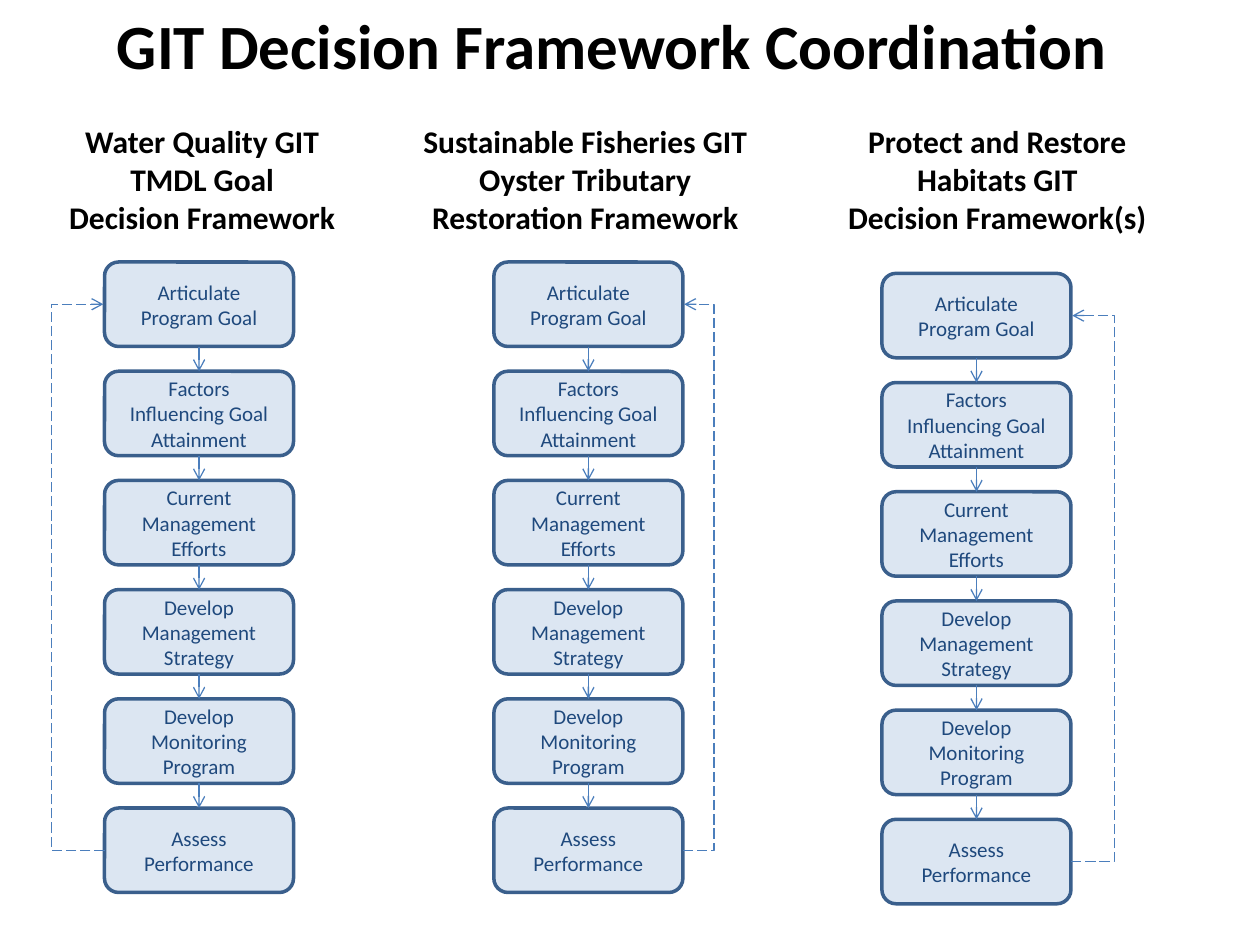
from dataclasses import dataclass

from lxml import etree
from pptx import Presentation
from pptx import util as u
from pptx.dml.color import RGBColor
from pptx.enum import dml, shapes, text
from pptx.oxml import ns

BOX_W, BOX_H = 1.5, 0.67
PITCH = 2.6 / 3
HEADING_TOP, HEADING_H = 0.92, 1.01
FONT = "Calibri"
BLACK, NAVY, PALE, EDGE, ARROW = "000000", "1F497D", "DCE6F2", "3A5F8C", "4B7EBC"

STEPS = [
    "Articulate Program Goal",
    "Factors Influencing Goal Attainment",
    "Current Management Efforts",
    "Develop Management Strategy",
    "Develop\nMonitoring Program",
    "Assess Performance",
]


@dataclass
class Framework:
    heading: str
    heading_left: float
    heading_width: float
    left: float
    top: float
    loop_x: float


FRAMEWORKS = [
    Framework("Water Quality GIT\nTMDL Goal\nDecision Framework",
              0.44, 2.33, 0.83, 2.08, 0.4),
    Framework("Sustainable Fisheries GIT\nOyster Tributary\nRestoration Framework",
              3.25, 2.79, 3.92, 2.08, 5.67),
    Framework("Protect and Restore\nHabitats GIT\nDecision Framework(s)",
              6.62, 2.59, 7, 2.17, 8.85),
]


def color(value: str) -> RGBColor:
    return RGBColor.from_string(value)


def write(s, content: str, size: float, ink: str, bold: bool = False,
          align=text.PP_ALIGN.CENTER) -> None:
    tf = s.text_frame
    tf.text = content
    for p in tf.paragraphs:
        p.alignment = align
        for r in p.runs:
            r.font.name, r.font.size, r.font.bold = FONT, u.Pt(size), bold
            r.font.color.rgb = color(ink)


def add_label(slide, left: float, top: float, width: float, height: float,
              content: str, size: float, align=text.PP_ALIGN.CENTER) -> None:
    s = slide.shapes.add_textbox(*map(u.Inches, (left, top, width, height)))
    write(s, content, size, BLACK, True, align)
    s.text_frame.word_wrap = False
    s.text_frame.auto_size = text.MSO_AUTO_SIZE.SHAPE_TO_FIT_TEXT


def add_step(slide, left: float, top: float, content: str):
    s = slide.shapes.add_shape(shapes.MSO_SHAPE.ROUNDED_RECTANGLE,
                               *map(u.Inches, (left, top, BOX_W, BOX_H)))
    s.shadow.inherit = False
    s.fill.solid()
    s.fill.fore_color.rgb = color(PALE)
    s.line.color.rgb = color(EDGE)
    s.line.width = u.Pt(2)
    write(s, content, 12, NAVY)
    s.text_frame.vertical_anchor = text.MSO_ANCHOR.MIDDLE
    return s


def add_arrow(slide, kind, x1: float, y1: float, x2: float, y2: float):
    c = slide.shapes.add_connector(kind, *map(u.Inches, (x1, y1, x2, y2)))
    c.line.color.rgb = color(ARROW)
    c.line.width = u.Pt(0.75)
    return c


def finish_arrow(c) -> None:
    """Add the open arrowhead and switch off the theme shadow."""
    ln = c.line._get_or_add_ln()
    etree.SubElement(ln, ns.qn("a:tailEnd"), type="arrow")
    etree.SubElement(c._element.spPr, ns.qn("a:effectLst"))


def add_down_arrow(slide, upper, lower) -> None:
    c = add_arrow(slide, shapes.MSO_CONNECTOR.STRAIGHT, 0, 0, 0, 0)
    c.begin_connect(upper, 2)
    c.end_connect(lower, 0)
    finish_arrow(c)


def add_loop(slide, f: Framework) -> None:
    """Draw the dashed feedback path from the last step to the first."""
    on_left = f.loop_x < f.left
    side = f.left if on_left else f.left + BOX_W
    step = -0.01 if on_left else 0.01
    end_y = f.top + BOX_H / 2
    start_y = end_y + PITCH * (len(STEPS) - 1)
    c = add_arrow(slide, shapes.MSO_CONNECTOR.ELBOW, side, start_y, side + step, end_y)
    bend = round((f.loop_x - side) / step * 100000)
    guides = c._element.spPr.find(ns.qn("a:prstGeom")).get_or_add_avLst()
    etree.SubElement(guides, ns.qn("a:gd"), name="adj1", fmla=f"val {bend}")
    c.line.dash_style = dml.MSO_LINE.LONG_DASH
    finish_arrow(c)


def add_framework(slide, f: Framework) -> None:
    add_label(slide, f.heading_left, HEADING_TOP, f.heading_width, HEADING_H,
              f.heading, 18)
    boxes = [add_step(slide, f.left, f.top + i * PITCH, step)
             for i, step in enumerate(STEPS)]
    for upper, lower in zip(boxes, boxes[1:]):
        add_down_arrow(slide, upper, lower)
    add_loop(slide, f)


def main() -> None:
    prs = Presentation()
    prs.slide_width, prs.slide_height = u.Inches(10), u.Inches(7.5)
    slide = prs.slides.add_slide(prs.slide_layouts[6])
    add_label(slide, 0.83, 0, 8.14, 0.71, "GIT Decision Framework Coordination",
              36, text.PP_ALIGN.LEFT)
    for f in FRAMEWORKS:
        add_framework(slide, f)
    prs.save("out.pptx")


if __name__ == "__main__":
    main()
